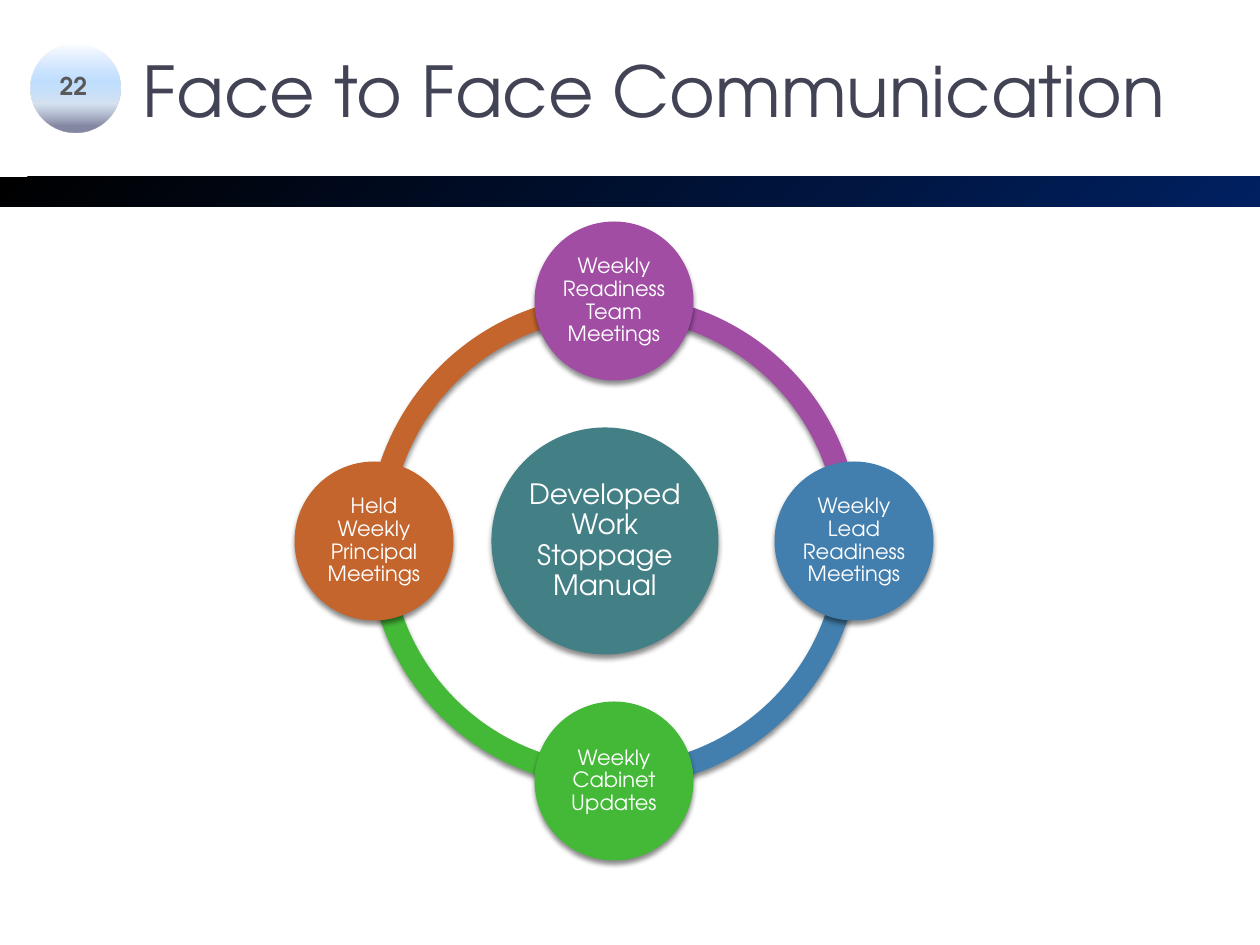
from lxml.etree import SubElement
from pptx import Presentation
from pptx.dml.color import RGBColor
from pptx.enum.shapes import MSO_SHAPE
from pptx.enum.text import MSO_ANCHOR, PP_ALIGN
from pptx.oxml.ns import qn
from pptx.util import Pt

PX = 914400 / 126
COLORS = {
    "title": "424456", "number": "595959", "white": "FFFFFF", "black": "000000",
    "navy": "002060", "teal": "438086", "purple": "A04DA3", "blue": "427FAE",
    "green": "44B938", "orange": "C4652D",
    "sky": "5E9EFF", "pale": "85C2FF", "mist": "C4D6EB", "slate": "8588A2",
}


class Deck:
    """Draws styled elements on the current slide."""

    font = "TeX Gyre Adventor"

    def __init__(self, width, height):
        self.prs = Presentation()
        self.prs.slide_width, self.prs.slide_height = self.emu(width, height)
        self.slide = self.prs.slides.add_slide(self.prs.slide_layouts[6])

    def emu(self, *sizes):
        return [round(size * PX) for size in sizes]

    def shape(self, kind, box):
        item = self.slide.shapes.add_shape(kind, *self.emu(*box))
        item.line.fill.background()
        item.shadow.inherit = False
        return item

    def blend(self, kind, box, stops, angle):
        item = self.shape(kind, box)
        item.fill.gradient()
        item.fill.gradient_angle = angle
        ramp = item._element.spPr.find(qn("a:gradFill")).find(qn("a:gsLst"))
        for old in list(ramp):
            ramp.remove(old)
        for pos, color, alpha in stops:
            stop = SubElement(ramp, qn("a:gs"), pos=str(pos * 1000))
            self.tint(stop, color, alpha)

    def tint(self, parent, color, alpha):
        node = SubElement(parent, qn("a:srgbClr"), val=COLORS[color])
        SubElement(node, qn("a:alpha"), val=str(alpha * 1000))

    def solid(self, kind, box, color):
        item = self.shape(kind, box)
        item.fill.solid()
        item.fill.fore_color.rgb = RGBColor.from_string(COLORS[color])
        effects = item._element.spPr.find(qn("a:effectLst"))
        shade = SubElement(effects, qn("a:outerShdw"), blurRad=str(Pt(3)),
                           dist=str(Pt(2.4)), dir="5400000", algn="ctr", rotWithShape="0")
        self.tint(shade, "black", 45)
        return item

    def arc(self, x, y, size, start, color):
        box = (x - size / 2, y - size / 2, size, size)
        item = self.solid(MSO_SHAPE.BLOCK_ARC, box, color)
        end = (start + 90) % 360
        for i, value in enumerate((start * 0.6, end * 0.6, 0.046)):
            item.adjustments[i] = value

    def disc(self, x, y, size, color, text, points):
        box = (x - size / 2, y - size / 2, size, size)
        frame = self.solid(MSO_SHAPE.OVAL, box, color).text_frame
        frame.margin_left = frame.margin_right = Pt(1.5)
        frame.margin_top = frame.margin_bottom = Pt(1.5)
        self.words(frame, text, points, "white", PP_ALIGN.CENTER).line_spacing = 0.9

    def label(self, box, text, points, color, align, bold=False):
        frame = self.slide.shapes.add_textbox(*self.emu(*box)).text_frame
        self.words(frame, text, points, color, align, bold)

    def words(self, frame, text, points, color, align, bold=False):
        frame.word_wrap = True
        frame.vertical_anchor = MSO_ANCHOR.MIDDLE
        para = frame.paragraphs[0]
        para.alignment = align
        run = para.add_run()
        run.text = text
        run.font.name = self.font
        run.font.size = Pt(points)
        run.font.bold = bold
        run.font.color.rgb = RGBColor.from_string(COLORS[color])
        return para


def main():
    deck = Deck(1260, 945)
    deck.blend(MSO_SHAPE.OVAL, (31, 44, 89, 89),
               [(0, "sky", 0), (42, "pale", 51), (67, "mist", 70), (92, "slate", 100)], 270)
    deck.blend(MSO_SHAPE.RECTANGLE, (0, 177, 1260, 30),
               [(0, "black", 100), (100, "navy", 100)], 315)
    deck.label((130, 32, 1077, 116), "Face to Face Communication", 40, "title", PP_ALIGN.LEFT)
    deck.label((37, 69, 73, 34), "22", 14, "number", PP_ALIGN.CENTER, True)

    x, y, reach = 614, 541, 240
    steps = [
        (0, -1, "purple", "Weekly Readiness Team Meetings"),
        (1, 0, "blue", "Weekly Lead Readiness Meetings"),
        (0, 1, "green", "Weekly Cabinet Updates"),
        (-1, 0, "orange", "Held Weekly Principal Meetings"),
    ]
    for i, (_, _, color, _) in reversed(list(enumerate(steps))):
        deck.arc(x, y, 493, (270 + 90 * i) % 360, color)
    deck.disc(605, y, 227, "teal", "Developed Work Stoppage Manual", 16)
    for dx, dy, color, text in steps:
        deck.disc(x + dx * reach, y + dy * reach, 159, color, text, 12)
    deck.prs.save("out.pptx")


if __name__ == "__main__":
    main()
